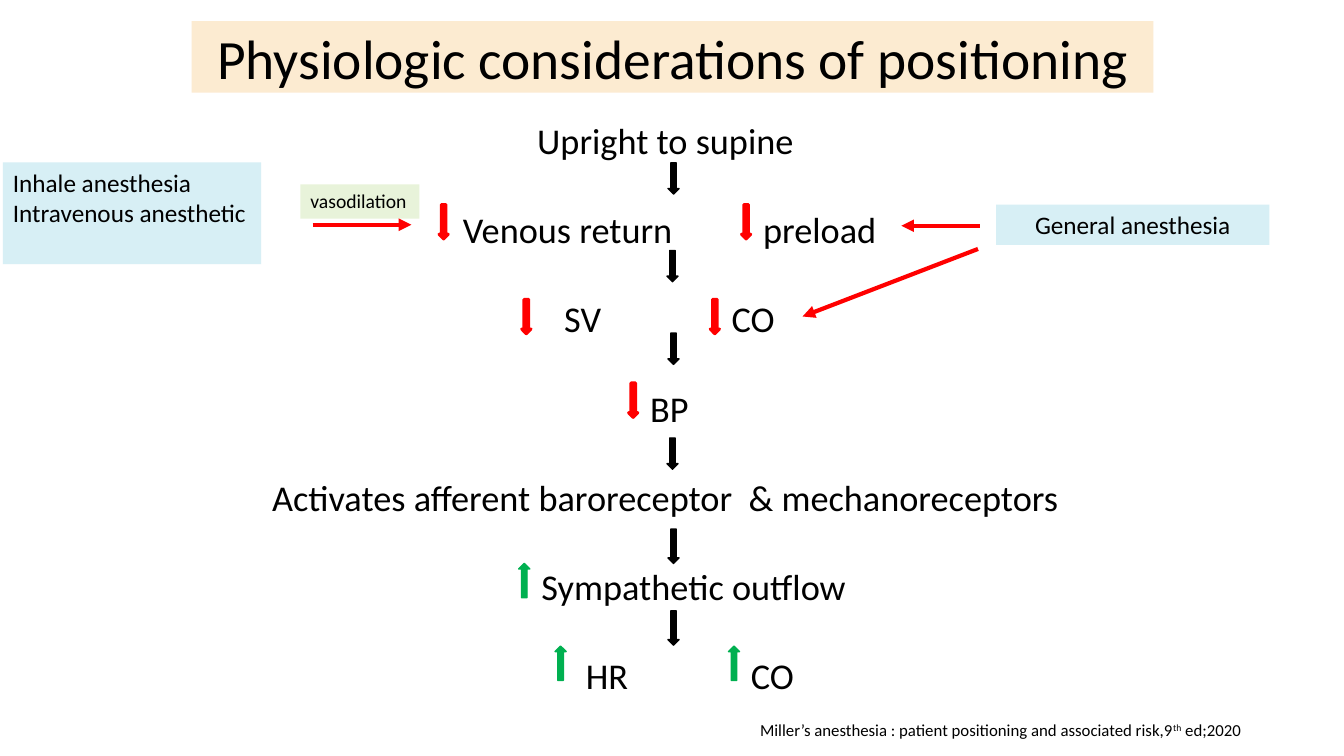
"""Build the slide on physiologic considerations of positioning."""
from lxml import etree
from pptx import Presentation
from pptx import util as u
from pptx.dml.color import RGBColor
from pptx.enum import shapes, text
from pptx.oxml.ns import qn

BLACK, RED, GREEN = "000000", "FF0000", "00B050"
PEACH, BLUE, LIME = "FCEBD1", "D7EFF5", "E8F3DA"
FONT = "Calibri"
LEFT, CENTER = text.PP_ALIGN.LEFT, text.PP_ALIGN.CENTER
TOP, MIDDLE = text.MSO_ANCHOR.TOP, text.MSO_ANCHOR.MIDDLE
DOWN, UP = shapes.MSO_SHAPE.DOWN_ARROW, shapes.MSO_SHAPE.UP_ARROW

TITLE = ["Physiologic considerations of positioning"]
CITATION = ("Miller’s anesthesia : patient positioning and associated risk,9", "th", " ed;2020")

FLOW_ROWS = [
    [("Upright to supine", 6.6)],
    [("Venous return", 5.63), ("preload", 8.13)],
    [("SV", 5.78), ("CO", 7.47)],
    [("BP", 6.64)],
    [("Activates afferent baroreceptor  & mechanoreceptors", 6.6)],
    [("Sympathetic outflow", 6.88)],
    [("HR", 6.02), ("CO", 7.66)],
]
FIRST_ROW, ROW_PITCH, ROW_HEIGHT = 1.39, 0.885, 0.5
LABEL_SIZE = 25.9

PANELS = [
    (TITLE, (1.9, 0.21, 9.54, 0.71), PEACH, 39.6, CENTER, MIDDLE),
    (["General anesthesia"], (9.88, 2.03, 2.71, 0.4), BLUE, 18, CENTER, TOP),
    (["Inhale anesthesia", "Intravenous anesthetic"], (0.03, 1.61, 2.56, 1.01), BLUE, 18, LEFT, TOP),
    (["vasodilation"], (2.98, 1.83, 1.18, 0.34), LIME, 14, LEFT, TOP),
]

ARROW_GROUPS = [
    (DOWN, BLACK, 0.11, 0.31, 1, [(6.68, 1.77), (6.67, 2.64), (6.68, 3.46), (6.67, 4.5)]),
    (DOWN, BLACK, 0.11, 0.34, 1, [(6.68, 5.42), (6.68, 6.23)]),
    (DOWN, RED, 0.09, 0.34, 2.25,
     [(4.4, 2.2), (7.4, 2.2), (5.22, 3.14), (7.09, 3.14), (6.28, 3.97)]),
    (UP, GREEN, 0.11, 0.34, 1, [(5.2, 5.76), (5.56, 6.58), (7.28, 6.58)]),
]

INFLUENCES = [
    ((9.72, 2.24), (8.94, 2.24)),
    ((9.7, 2.47), (7.96, 3.14)),
    ((3.1, 2.23), (4.08, 2.23)),
]


def color(value):
    return RGBColor.from_string(value)


def assign(target, values):
    for name, value in values.items():
        setattr(target, name, value)


def add_run(paragraph, words, size):
    run = paragraph.add_run()
    run.text = words
    assign(run.font, {"name": FONT, "size": u.Pt(size)})
    run.font.color.rgb = color(BLACK)
    return run


def add_text(slide, lines, box, size, align=LEFT, anchor=TOP, fill=None):
    shape = slide.shapes.add_textbox(*map(u.Inches, box))
    assign(shape.text_frame, {"word_wrap": True, "vertical_anchor": anchor})
    if fill:
        shape.fill.solid()
        shape.fill.fore_color.rgb = color(fill)
    for index, runs in enumerate(lines):
        frame = shape.text_frame
        paragraph = frame.add_paragraph() if index else frame.paragraphs[0]
        paragraph.alignment = align
        for words in [runs] if isinstance(runs, str) else runs:
            add_run(paragraph, words, size)
    return shape


def add_block_arrow(slide, kind, shade, width, height, weight, center):
    x, y = center
    box = (x - width / 2, y - height / 2, width, height)
    arrow = slide.shapes.add_shape(kind, *map(u.Inches, box))
    arrow.shadow.inherit = False
    arrow.fill.solid()
    arrow.fill.fore_color.rgb = color(shade)
    arrow.line.color.rgb = color(shade)
    arrow.line.width = u.Pt(weight)


def add_influence(slide, start, end):
    connector = slide.shapes.add_connector(
        shapes.MSO_CONNECTOR.STRAIGHT, *map(u.Inches, start + end))
    connector.line.color.rgb = color(RED)
    connector.line.width = u.Pt(3)
    etree.SubElement(connector.line._get_or_add_ln(), qn("a:tailEnd"), type="triangle")
    etree.SubElement(connector._element.spPr, qn("a:effectLst"))


def main():
    presentation = Presentation()
    assign(presentation, {"slide_width": u.Inches(13.33), "slide_height": u.Inches(7.5)})
    slide = presentation.slides.add_slide(presentation.slide_layouts[6])

    for row, labels in enumerate(FLOW_ROWS):
        top = FIRST_ROW + row * ROW_PITCH - ROW_HEIGHT / 2
        for label, center in labels:
            width = 0.5 + 0.17 * len(label)
            box = (center - width / 2, top, width, ROW_HEIGHT)
            add_text(slide, [label], box, LABEL_SIZE, CENTER, MIDDLE)

    for lines, box, fill, size, align, anchor in PANELS:
        add_text(slide, lines, box, size, align, anchor, fill)

    citation = add_text(slide, [CITATION], (7.44, 7.09, 5.6, 0.3), 12)
    ordinal = citation.text_frame.paragraphs[0].runs[1]
    ordinal.font._element.set("baseline", "30000")

    for *style, centers in ARROW_GROUPS:
        for center in centers:
            add_block_arrow(slide, *style, center)

    for start, end in INFLUENCES:
        add_influence(slide, start, end)

    presentation.save("out.pptx")


if __name__ == "__main__":
    main()
